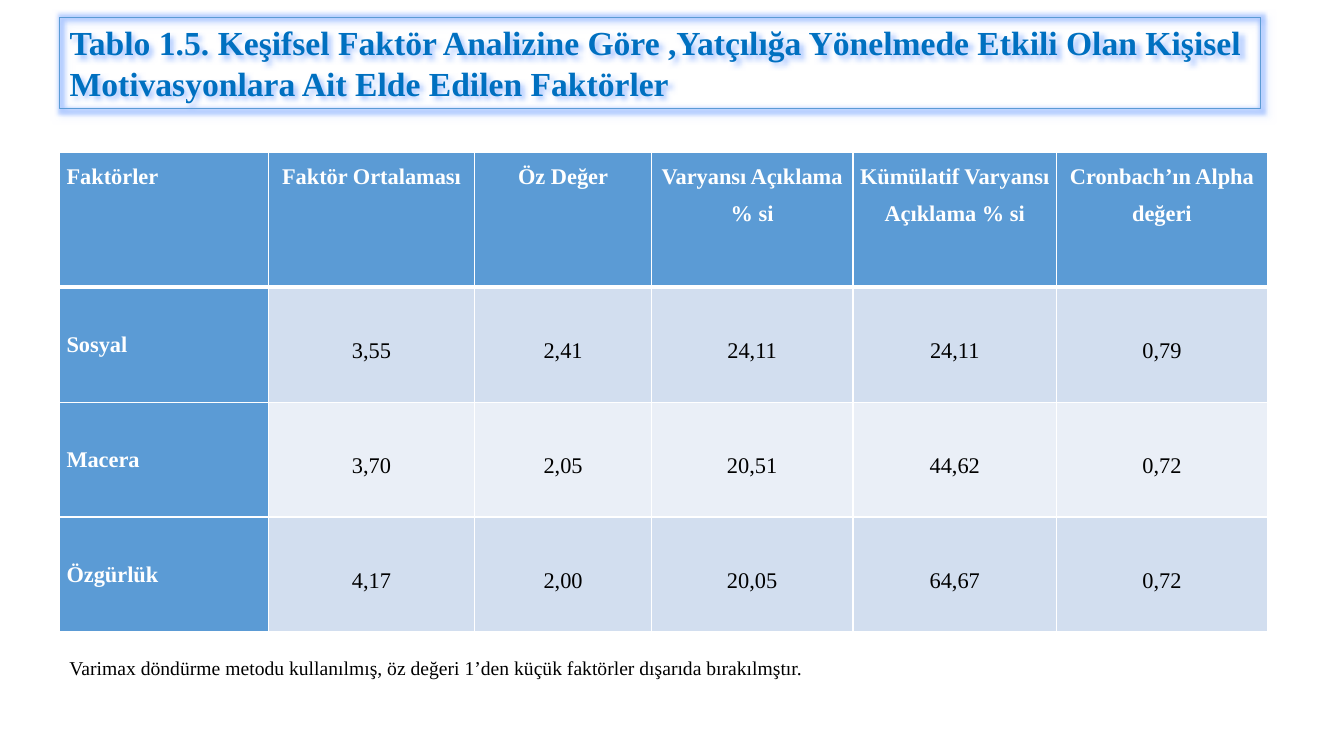
from lxml.etree import SubElement
from pptx import Presentation
from pptx.dml.color import RGBColor
from pptx.enum.text import MSO_ANCHOR, MSO_AUTO_SIZE, PP_ALIGN
from pptx.oxml import parse_xml
from pptx.oxml.ns import nsdecls, qn
from pptx.util import Inches, Pt

HEADERS = ["Faktörler", "Faktör Ortalaması", "Öz Değer", "Varyansı Açıklama % si",
           "Kümülatif Varyansı Açıklama % si", "Cronbach’ın Alpha değeri"]
FACTORS = [
    ["Sosyal", "3,55", "2,41", "24,11", "24,11", "0,79"],
    ["Macera", "3,70", "2,05", "20,51", "44,62", "0,72"],
    ["Özgürlük", "4,17", "2,00", "20,05", "64,67", "0,72"],
]
COLUMN_WIDTHS = [2.07, 2.05, 1.75, 2, 2.02, 2.09]
ROW_HEIGHTS = [1.34, 1.14, 1.14, 1.14]


def color(value):
    return RGBColor.from_string(value)


def assign(target, values):
    for name, value in values.items():
        setattr(target, name, value)


class FactorSlide:
    """Holds the slide style and draws its title, note and table."""

    font = "Times New Roman"
    accent = "5B9BD5"
    bands = ["D2DEEF", "EAEFF7"]
    glow = "6699FF"

    def __init__(self, presentation):
        self.slide = presentation.slides.add_slide(presentation.slide_layouts[5])

    def add_text(self, frame, text, size, ink, bold=False, align=PP_ALIGN.LEFT, spacing=1.0):
        paragraph = frame.paragraphs[0]
        assign(paragraph, {"alignment": align, "line_spacing": spacing})
        run = paragraph.add_run()
        run.text = text
        assign(run.font, {"name": self.font, "size": Pt(size), "bold": bold})
        run.font.color.rgb = color(ink)

    def title(self, text, left, top, width, height):
        title = self.slide.shapes.title
        assign(title, {"left": Inches(left), "top": Inches(top),
                       "width": Inches(width), "height": Inches(height)})
        title.line.color.rgb = color(self.accent)
        title.line.width = Pt(0.75)
        title._element.spPr.append(parse_xml(
            f'<a:effectLst {nsdecls("a")}>'
            f'<a:glow rad="{Pt(5)}"><a:srgbClr val="{self.glow}">'
            '<a:alpha val="40000"/></a:srgbClr></a:glow>'
            f'<a:outerShdw blurRad="{Pt(4)}" dist="{Pt(3)}" dir="2700000">'
            f'<a:srgbClr val="{self.glow}"><a:alpha val="60000"/></a:srgbClr>'
            '</a:outerShdw></a:effectLst>'))
        assign(title.text_frame, {"word_wrap": True, "vertical_anchor": MSO_ANCHOR.TOP,
                                  "auto_size": MSO_AUTO_SIZE.SHAPE_TO_FIT_TEXT})
        self.add_text(title.text_frame, text, 24, "0070C0", bold=True)

    def note(self, text, left, top, width, height):
        note = self.slide.shapes.add_textbox(
            Inches(left), Inches(top), Inches(width), Inches(height))
        note.text_frame.word_wrap = True
        self.add_text(note.text_frame, text, 14, "000000")

    def borders(self, cell, widths):
        properties = cell._tc.get_or_add_tcPr()
        for side, width in widths.items():
            line = SubElement(properties, qn(f"a:ln{side}"), w=str(Pt(width)))
            fill = SubElement(line, qn("a:solidFill"))
            SubElement(fill, qn("a:srgbClr"), val="FFFFFF")

    def cell(self, cell, text, row, column):
        header, label = row == 0, column == 0
        strong = header or label
        self.borders(cell, {"L": 1, "R": 1, "T": 3 if row == 1 else 1, "B": 3 if header else 1})
        cell.fill.solid()
        cell.fill.fore_color.rgb = color(self.accent if strong else self.bands[(row - 1) % 2])
        assign(cell, {"margin_left": Inches(0.07), "margin_right": Inches(0.07),
                      "margin_top": 0, "margin_bottom": 0,
                      "vertical_anchor": MSO_ANCHOR.TOP if header else MSO_ANCHOR.MIDDLE})
        self.add_text(cell.text_frame, text, 16, "FFFFFF" if strong else "000000", strong,
                      PP_ALIGN.LEFT if label else PP_ALIGN.CENTER,
                      1.0 if label and not header else 1.5)

    def table(self, rows, left, top):
        table = self.slide.shapes.add_table(
            len(rows), len(COLUMN_WIDTHS), Inches(left), Inches(top),
            Inches(sum(COLUMN_WIDTHS)), Inches(sum(ROW_HEIGHTS))).table
        for column, width in zip(table.columns, COLUMN_WIDTHS):
            column.width = Inches(width)
        for row, height in zip(table.rows, ROW_HEIGHTS):
            row.height = Inches(height)
        for row, texts in enumerate(rows):
            for column, text in enumerate(texts):
                self.cell(table.cell(row, column), text, row, column)


def main():
    presentation = Presentation()
    assign(presentation, {"slide_width": Inches(13.33), "slide_height": Inches(7.5)})
    page = FactorSlide(presentation)
    page.title("Tablo 1.5. Keşifsel Faktör Analizine Göre ,Yatçılığa Yönelmede Etkili Olan "
               "Kişisel Motivasyonlara Ait Elde Edilen Faktörler", 0.59, 0.17, 11.91, 0.91)
    page.note("Varimax döndürme metodu kullanılmış, öz değeri 1’den küçük faktörler "
              "dışarıda bırakılmştır.", 0.59, 6.46, 10.78, 0.57)
    page.table([HEADERS] + FACTORS, 0.59, 1.51)
    presentation.save("out.pptx")


if __name__ == "__main__":
    main()
